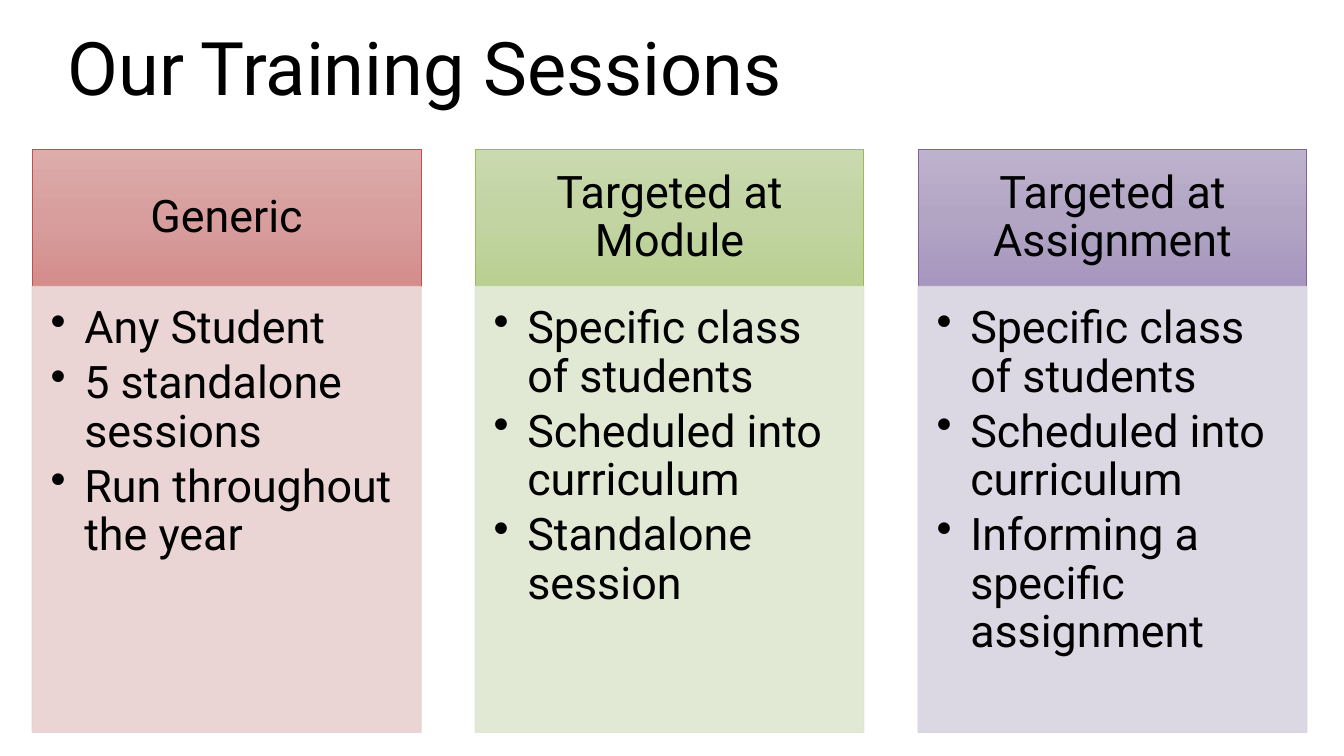
from copy import deepcopy
from pptx import Presentation
from pptx.dml.color import RGBColor
from pptx.enum.shapes import MSO_SHAPE as Preset
from pptx.enum.text import MSO_ANCHOR as Anchor, MSO_AUTO_SIZE as AutoSize, PP_ALIGN as Align
from pptx.oxml.ns import qn
from pptx.oxml.xmlchemy import OxmlElement
from pptx.util import Pt

LEFT, PITCH, WIDTH = 17.2, 237.3, 208.4
HEAD_TOP, HEAD_HEIGHT, LIST_HEIGHT = 80, 73.4, 239
COLUMNS = [
    ("Generic", ["DDACAB", "D79E9D", "D48D8B"], "C0504D", "E8D0D0",
     ["Any Student", "5 standalone sessions", "Run throughout the year"]),
    ("Targeted at Module", ["CADAAF", "C1D4A2", "B9D091"], "9BBB59", "DEE7D1",
     ["Specific class of students", "Scheduled into curriculum", "Standalone session"]),
    ("Targeted at Assignment", ["BDB2CD", "B2A5C4", "A796BE"], "8064A2", "D8D3E0",
     ["Specific class of students", "Scheduled into curriculum", "Informing a specific assignment"]),
]


def color(value):
    return RGBColor.from_string(value)


class Painter:
    """Holds the text style and the current slide, and draws its elements."""

    font, ink, size = "Roboto", "000000", 24

    def __init__(self, page):
        self.page = page

    def add_text(self, para, text, align, size=size):
        para.alignment, para.line_spacing = align, 0.9
        span = para.add_run()
        span.text = text
        span.font.name, span.font.size = self.font, Pt(size)
        span.font.color.rgb = color(self.ink)

    def frame(self, shape, anchor, insets):
        frame = shape.text_frame
        frame.word_wrap, frame.auto_size = True, AutoSize.NONE
        frame.vertical_anchor = anchor
        (frame.margin_left, frame.margin_top,
         frame.margin_right, frame.margin_bottom) = map(Pt, insets)
        return frame

    def title(self, text, left, top, width, height):
        title = self.page.shapes.title
        title.left, title.top, title.width, title.height = map(Pt, (left, top, width, height))
        frame = self.frame(title, Anchor.MIDDLE, (7.2, 3.6, 7.2, 3.6))
        self.add_text(frame.paragraphs[0], text, Align.LEFT, 39.6)

    def box(self, left, top, height, line):
        box = self.page.shapes.add_shape(Preset.RECTANGLE, *map(Pt, (left, top, WIDTH, height)))
        box.shadow.inherit = False
        box.line.color.rgb, box.line.width = color(line), Pt(0.5)
        return box

    def header(self, text, left, shades, line):
        box = self.box(left, HEAD_TOP, HEAD_HEIGHT, line)
        box.fill.gradient()
        box.fill.gradient_angle = 270
        first = next(box.element.spPr.iter(qn("a:gs")))
        first.addnext(deepcopy(first))
        for stop, shade, position in zip(box.fill.gradient_stops, shades, (0, 0.5, 1)):
            stop.color.rgb, stop.position = color(shade), position
        frame = self.frame(box, Anchor.MIDDLE, (13.4, 7.7, 13.4, 7.7))
        self.add_text(frame.paragraphs[0], text, Align.CENTER)

    def bullets(self, items, left, tint):
        box = self.box(left, HEAD_TOP + HEAD_HEIGHT, LIST_HEIGHT, tint)
        box.fill.solid()
        box.fill.fore_color.rgb = color(tint)
        for paint in box.element.spPr.iter(qn("a:srgbClr")):
            alpha = OxmlElement("a:alpha")
            alpha.set("val", "90000")
            paint.append(alpha)
        frame = self.frame(box, Anchor.TOP, (10, 10, 13.4, 15))
        for index, item in enumerate(items):
            para = frame.add_paragraph() if index else frame.paragraphs[0]
            self.add_text(para, item, Align.LEFT)
            para.space_after = Pt(3.6)
            props = para._p.get_or_add_pPr()
            props.set("marL", str(Pt(18)))
            props.set("indent", str(-Pt(18)))
            bullet = OxmlElement("a:buChar")
            bullet.set("char", "•")
            props.append(bullet)


def main():
    deck = Presentation()
    deck.slide_width, deck.slide_height = Pt(720), Pt(405)
    painter = Painter(deck.slides.add_slide(deck.slide_layouts[5]))
    painter.title("Our Training Sessions", 29, 13, 620.6, 51)
    for index, (heading, shades, line, tint, items) in enumerate(COLUMNS):
        left = LEFT + index * PITCH
        painter.header(heading, left, shades, line)
        painter.bullets(items, left, tint)
    deck.save("out.pptx")


if __name__ == "__main__":
    main()
